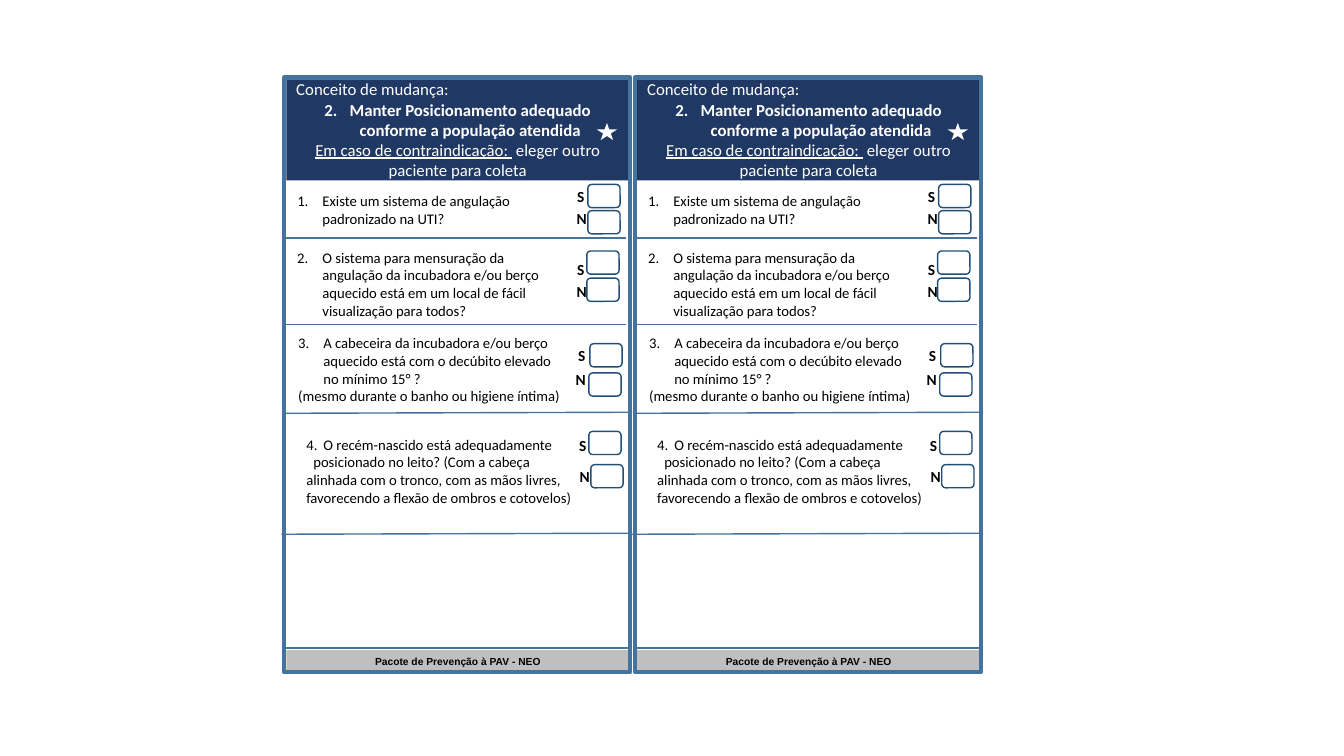
from lxml import etree
from pptx import Presentation
from pptx.dml.color import RGBColor
from pptx.enum.shapes import MSO_CONNECTOR, MSO_SHAPE
from pptx.enum.text import MSO_ANCHOR, PP_ALIGN
from pptx.oxml.ns import qn
from pptx.util import Pt

RECT, ROUND, STAR = MSO_SHAPE.RECTANGLE, MSO_SHAPE.ROUNDED_RECTANGLE, MSO_SHAPE.STAR_5_POINT
STRAIGHT = MSO_CONNECTOR.STRAIGHT
LEFT, CENTER = PP_ALIGN.LEFT, PP_ALIGN.CENTER
MIDDLE = MSO_ANCHOR.MIDDLE

NAVY = RGBColor(0x20, 0x38, 0x64)
STEEL = RGBColor(0x43, 0x73, 0x9E)
BLUE = RGBColor(0x1F, 0x4E, 0x79)
GRAY = RGBColor(0xBF, 0xBF, 0xBF)
WHITE = RGBColor(0xFF, 0xFF, 0xFF)
BLACK = RGBColor(0, 0, 0)

EMU_PER_PX = 9144  # 100 px to the inch
SLIDE_SIZE = (1333, 750)
CARD_LEFTS = (282, 630)

# Content: positions across are counted from the left edge of a card
FOOTER = "Pacote de Prevenção à PAV - NEO"
HEADER = [
    dict(spans=[("Conceito de mudança:", {})]),
    dict(spans=[("Manter Posicionamento adequado conforme a população atendida", {"bold": True})],
         align=CENTER, number=2, margin=25, indent=-25),
    dict(spans=[("Em caso de contraindicação: ", {"underline": True}),
                (" eleger outro paciente para coleta", {})], align=CENTER),
]
# Each question: text place, paragraphs, then places of the S and N boxes and letters
QUESTIONS = [
    dict(place=(3, 176, 282, 64),
         paras=[dict(spans=[("Existe um sistema de angulação padronizado na UTI?", {})],
                     number=1, margin=25, indent=-25)],
         boxes=[(301, 183), (301, 209)], letters=[(282, 186), (283, 208)]),
    dict(place=(3, 254, 286, 55),
         paras=[dict(spans=[("O sistema para mensuração da angulação da incubadora e/ou berço "
                             "aquecido está em um local de fácil visualização para todos?", {})],
                     number=2, margin=25, indent=-25)],
         boxes=[(300, 249), (300, 276)], letters=[(282, 259), (283, 281)]),
    dict(place=(4, 329, 283, 75),
         paras=[dict(spans=[("A cabeceira da incubadora e/ou berço aquecido está com o "
                             "decúbito elevado no mínimo 15° ?", {})],
                     number=3, margin=25, indent=-25),
                dict(spans=[("(mesmo durante o banho ou higiene íntima)", {})])],
         boxes=[(303, 341), (302, 370)], letters=[(283, 344), (282, 368)]),
    dict(place=(12, 424, 283, 86),
         paras=[dict(spans=[("O recém-nascido está adequadamente", {})],
                     number=4, margin=17, indent=-17),
                dict(spans=[("posicionado no leito? (Com a cabeça alinhada com o tronco, com "
                             "as mãos livres, favorecendo a flexão de ombros e cotovelos)", {})],
                     indent=7)],
         boxes=[(302, 428), (304, 461)], letters=[(284, 433), (286, 464)]),
]
DIVIDERS = [  # start across, start down, end across, end down
    (0, 236, 339, 236), (0, 322, 339, 322), (-2, 410, 345, 409),
    (-3, 530, 345, 529), (0, 643, 343, 643),
]


def px(value):
    return value * EMU_PER_PX


def write(box, paras, size, font="Calibri", color=BLACK, inset=(10, 5)):
    """Fill a shape with paragraphs, each a dict of spans and layout."""
    frame = box.text_frame
    frame.word_wrap = True
    frame.vertical_anchor = MIDDLE
    frame.margin_left = frame.margin_right = px(inset[0])
    frame.margin_top = frame.margin_bottom = px(inset[1])
    for position, item in enumerate(paras):
        para = frame.add_paragraph() if position else frame.paragraphs[0]
        para.alignment = item.get("align", LEFT)
        properties = para._p.get_or_add_pPr()
        properties.set("marL", str(px(item.get("margin", 0))))
        properties.set("indent", str(px(item.get("indent", 0))))
        if "number" in item:
            bullet = etree.SubElement(properties, qn("a:buAutoNum"))
            bullet.set("type", "arabicPeriod")
            bullet.set("startAt", str(item["number"]))
        for text, style in item["spans"]:
            span = para.add_run()
            span.text = text
            span.font.name, span.font.size = font, Pt(size)
            span.font.color.rgb = color
            span.font.bold = style.get("bold", False)
            span.font.underline = style.get("underline", False)


def add_box(page, kind, place, fill=None, line=None, weight=1):
    box = page.shapes.add_shape(kind, *map(px, place))
    box.shadow.inherit = False
    if fill is None:
        box.fill.background()
    else:
        box.fill.solid()
        box.fill.fore_color.rgb = fill
    if line is None:
        box.line.fill.background()
    else:
        box.line.color.rgb = line
        box.line.width = Pt(weight)
    return box


def add_divider(page, ends):
    divider = page.shapes.add_connector(STRAIGHT, *map(px, ends))
    divider.line.color.rgb = STEEL
    divider.line.width = Pt(1)
    etree.SubElement(divider._element.spPr, qn("a:effectLst"))


def add_card(page, left):
    # Footer, header and frame
    footer = add_box(page, RECT, (left + 2, 645, 340, 22), fill=GRAY)
    write(footer, [dict(spans=[(FOOTER, {"bold": True})], align=CENTER)], 7.3, font="Arial")
    header = add_box(page, RECT, (left + 2, 78, 340, 101), fill=NAVY)
    write(header, HEADER, 12, color=WHITE)
    add_box(page, STAR, (left + 310, 122, 20, 17), fill=WHITE)
    add_box(page, RECT, (left, 77, 343, 590), line=STEEL, weight=3)

    # Questions with their answer boxes
    for question in QUESTIONS:
        across, down, width, height = question["place"]
        box = page.shapes.add_textbox(*map(px, (left + across, down, width, height)))
        write(box, question["paras"], 10.5)
        for across, down in question["boxes"]:
            add_box(page, ROUND, (left + across, down, 32, 23), line=BLUE)
        for letter, (across, down) in zip("SN", question["letters"]):
            label = page.shapes.add_textbox(*map(px, (left + across, down, 24, 17)))
            write(label, [dict(spans=[(letter, {"bold": True})], align=CENTER)], 11, inset=(0, 0))

    # Dividers
    for x1, y1, x2, y2 in DIVIDERS:
        add_divider(page, (left + x1, y1, left + x2, y2))


def main():
    deck = Presentation()
    deck.slide_width, deck.slide_height = map(px, SLIDE_SIZE)
    page = deck.slides.add_slide(deck.slide_layouts[6])
    for left in CARD_LEFTS:
        add_card(page, left)
    deck.save("out.pptx")


if __name__ == "__main__":
    main()
